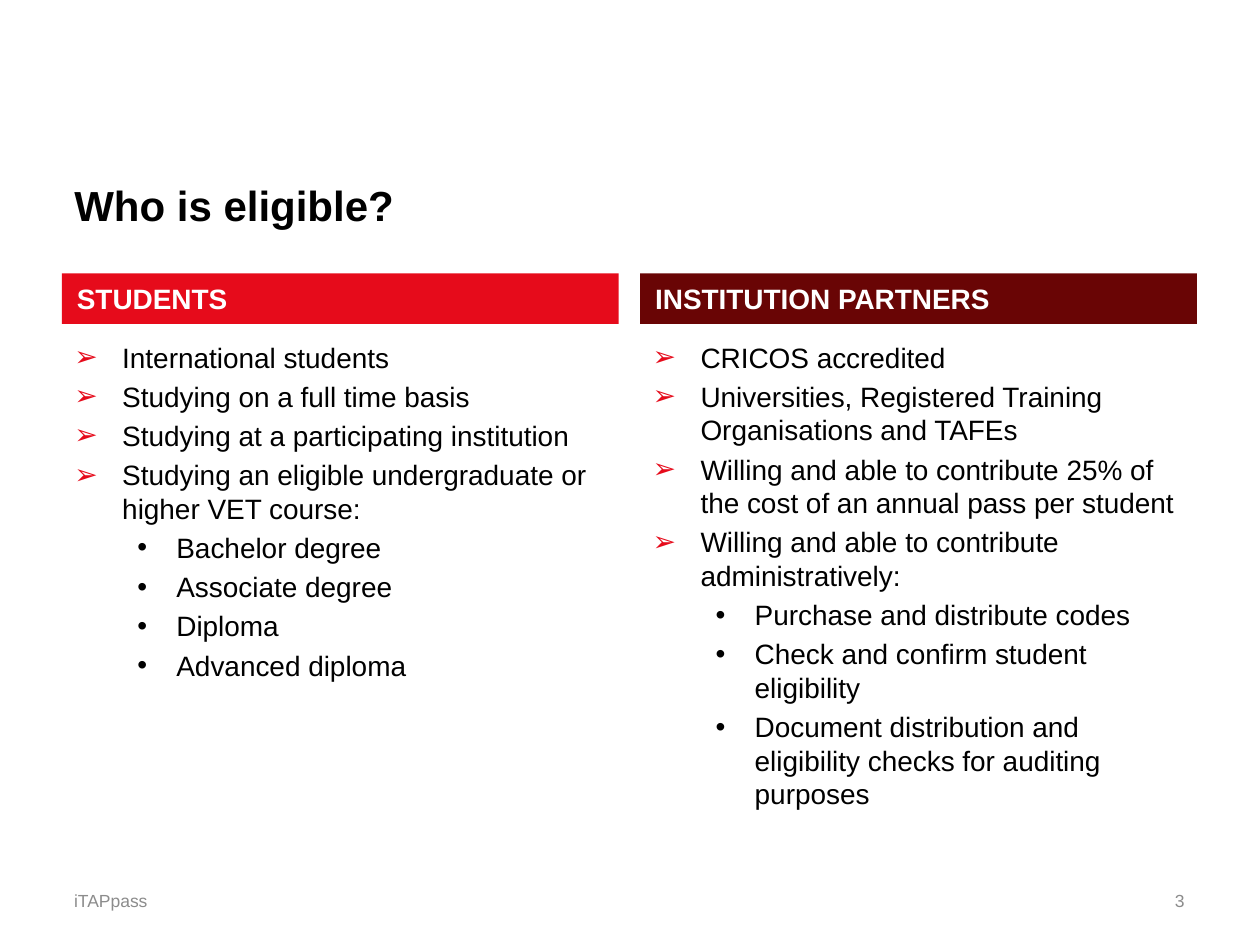
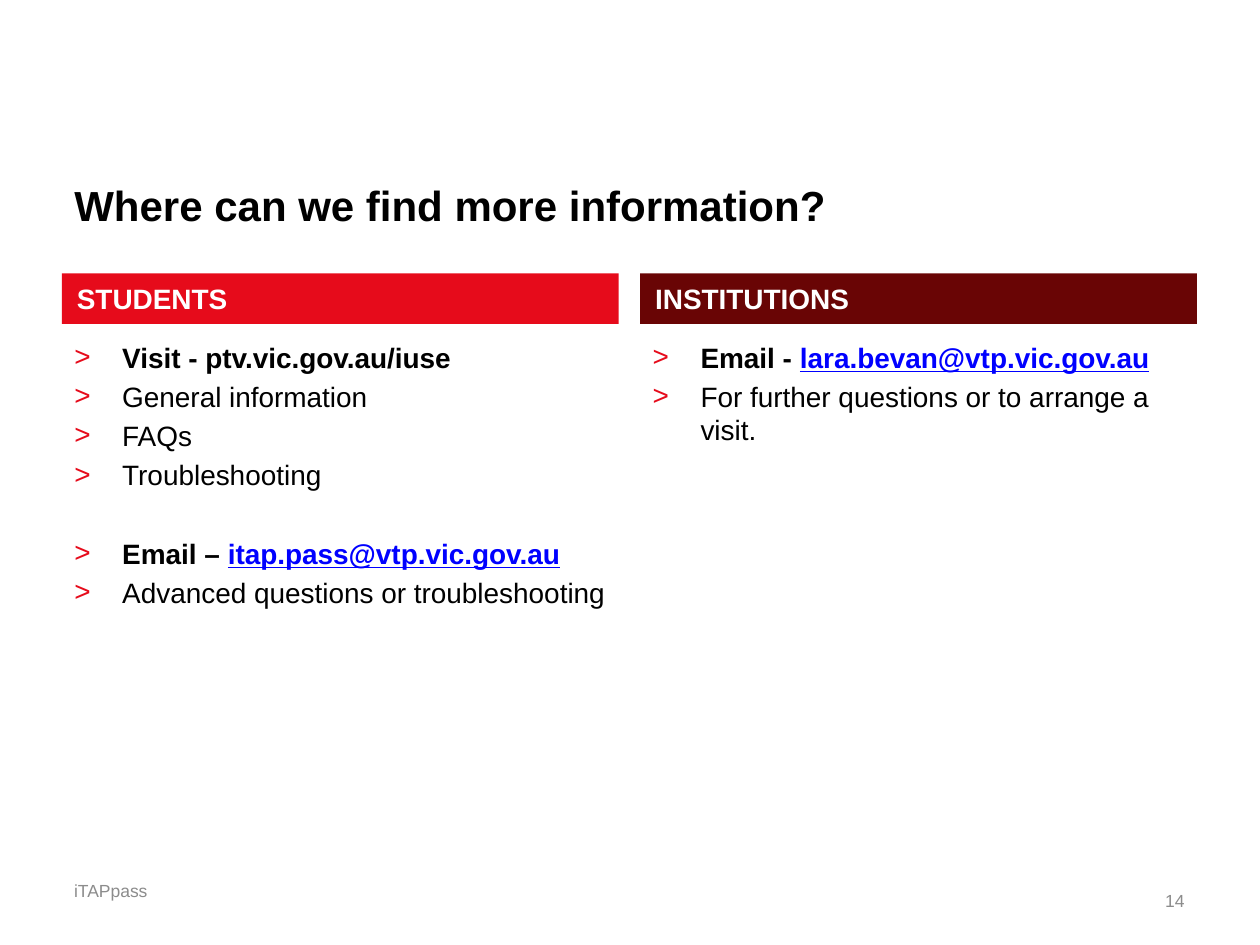
"""Build two comparison slides about a student travel pass."""
from dataclasses import dataclass

from lxml import etree
from pptx import Presentation
from pptx import util as u
from pptx.dml.color import RGBColor
from pptx.enum import text
from pptx.oxml import ns

COLORS = {
    "text": "000000",
    "white": "FFFFFF",
    "students": "E60B1B",
    "institutions": "690505",
    "link": "0000FF",
    "footer": "8C8C8C",
}
FONT = "Arial"
BODY_SIZE = 16
ITEM_SPACE = 3.2
BLANK_LINE_SPACE = 25.6
MARGIN, COLUMN, GUTTER = 0.49, 4.42, 0.17
CONTENT_WIDTH = 2 * COLUMN + GUTTER
FOOTER_WIDTH, NUMBER_WIDTH = 3.17, 2.33
PRODUCT = "iTAPpass"


@dataclass(frozen=True)
class Row:
    """A horizontal row of the slide grid, in inches."""
    top: float
    height: float


TITLE_ROW = Row(1.23, 0.79)
HEADER_ROW = Row(2.17, 0.4)
LIST_TOP = 2.65
FOOTER_ROW = Row(6.95, 0.4)


@dataclass(frozen=True)
class ListLevel:
    """Indents of a list level, in inches."""
    left: float
    hanging: float


LEVELS = (ListLevel(0.38, 0.38), ListLevel(0.81, 0.31))


@dataclass(frozen=True)
class Item:
    """One list entry, optionally ending in an e-mail address."""
    text: str
    level: int = 0
    bold: bool = False
    email: str = ""
    space: float = ITEM_SPACE


@dataclass(frozen=True)
class Column:
    """A headed list."""
    header: str
    color: str
    height: float
    items: tuple[Item, ...]


@dataclass(frozen=True)
class Page:
    """The content of one slide."""
    title: str
    number: int
    bullet: str
    columns: tuple[Column, Column]
    footer_lift: float = 0


PAGES = (
    Page("Who is eligible?", 3, "➢", (
        Column("STUDENTS", "students", 4.06, (
            Item("International students"),
            Item("Studying on a full time basis"),
            Item("Studying at a participating institution"),
            Item("Studying an eligible undergraduate or higher VET course:"),
            Item("Bachelor degree", 1),
            Item("Associate degree", 1),
            Item("Diploma", 1),
            Item("Advanced diploma", 1),
        )),
        Column("INSTITUTION PARTNERS", "institutions", 4.06, (
            Item("CRICOS accredited"),
            Item("Universities, Registered Training Organisations and TAFEs"),
            Item("Willing and able to contribute 25% of the cost of an annual pass per student"),
            Item("Willing and able to contribute administratively:"),
            Item("Purchase and distribute codes", 1),
            Item("Check and confirm student eligibility", 1),
            Item("Document distribution and eligibility checks for auditing purposes", 1),
        )),
    )),
    Page("Where can we find more information?", 14, ">", (
        Column("STUDENTS", "students", 2.47, (
            Item("Visit - ptv.vic.gov.au/iuse", bold=True),
            Item("General information"),
            Item("FAQs"),
            Item("Troubleshooting"),
            Item("Email – ", bold=True, email="itap.pass@vtp.vic.gov.au", space=BLANK_LINE_SPACE),
            Item("Advanced questions or troubleshooting"),
        )),
        Column("INSTITUTIONS", "institutions", 2.17, (
            Item("Email - ", bold=True, email="lara.bevan@vtp.vic.gov.au"),
            Item("For further questions or to arrange a visit."),
        )),
    ), footer_lift=0.16),
)


def rgb(name: str) -> RGBColor:
    """Return a named colour."""
    return RGBColor.from_string(COLORS[name])


def place(shape, left: float, top: float, width: float, height: float) -> None:
    """Move and size a shape in inches."""
    shape.left, shape.top = u.Inches(left), u.Inches(top)
    shape.width, shape.height = u.Inches(width), u.Inches(height)


def style_font(font, size: float, color: str, bold: bool = False) -> None:
    """Apply the shared typeface with a size, colour and weight."""
    font.name, font.size, font.bold = FONT, u.Pt(size), bold
    font.color.rgb = rgb(color)


def write_line(shape, words: str, size: float, color: str, bold: bool = False,
               align=text.PP_ALIGN.LEFT) -> None:
    """Write one vertically centred paragraph."""
    frame = shape.text_frame
    frame.word_wrap = True
    frame.auto_size = text.MSO_AUTO_SIZE.NONE
    frame.vertical_anchor = text.MSO_ANCHOR.MIDDLE
    frame.text = words
    paragraph = frame.paragraphs[0]
    paragraph.alignment = align
    paragraph.space_before = u.Pt(0)
    style_font(paragraph.font, size, color, bold)


def add_bullet(paragraph, level: int, bullet: str, color: str) -> None:
    """Give a paragraph a hanging bullet."""
    properties = paragraph._p.get_or_add_pPr()
    properties.set("marL", str(u.Inches(LEVELS[level].left)))
    properties.set("indent", str(-u.Inches(LEVELS[level].hanging)))
    bullet_color = etree.SubElement(properties, ns.qn("a:buClr"))
    etree.SubElement(bullet_color, ns.qn("a:srgbClr"), val=COLORS[color])
    etree.SubElement(properties, ns.qn("a:buFont"), typeface=FONT)
    etree.SubElement(properties, ns.qn("a:buChar"), char=bullet)


def write_list(shape, items: tuple[Item, ...], bullet: str) -> None:
    """Fill a body placeholder with bulleted items."""
    frame = shape.text_frame
    frame.auto_size = text.MSO_AUTO_SIZE.NONE
    for index, item in enumerate(items):
        paragraph = frame.add_paragraph() if index else frame.paragraphs[0]
        paragraph.level = item.level
        if item.level:
            add_bullet(paragraph, item.level, "•", "text")
        else:
            add_bullet(paragraph, item.level, bullet, "students")
        paragraph.space_before = u.Pt(item.space if index else 0)
        style_font(paragraph.font, BODY_SIZE, "text", item.bold)
        paragraph.add_run().text = item.text
        if item.email:
            address = paragraph.add_run()
            address.text = item.email
            address.font.underline = True
            address.font.color.rgb = rgb("link")


def draw_column(header, body, column: Column, index: int, bullet: str) -> None:
    """Draw a coloured header band and the list below it."""
    left = MARGIN + index * (COLUMN + GUTTER)
    place(header, left, HEADER_ROW.top, COLUMN, HEADER_ROW.height)
    header.fill.solid()
    header.fill.fore_color.rgb = rgb(column.color)
    header.text_frame.margin_left = u.Inches(0.12)
    write_line(header, column.header, BODY_SIZE, "white", True)
    place(body, left, LIST_TOP, COLUMN, column.height)
    write_list(body, column.items, bullet)


def draw_footer(slide, page: Page) -> None:
    """Draw the product name and the slide number."""
    number_left = MARGIN + CONTENT_WIDTH - NUMBER_WIDTH
    for words, left, width, align, lift in (
        (PRODUCT, MARGIN, FOOTER_WIDTH, text.PP_ALIGN.LEFT, page.footer_lift),
        (str(page.number), number_left, NUMBER_WIDTH, text.PP_ALIGN.RIGHT, 0),
    ):
        box = slide.shapes.add_textbox(0, 0, 0, 0)
        place(box, left, FOOTER_ROW.top, width, FOOTER_ROW.height)
        box.text_frame.margin_bottom = u.Inches(0.05 + lift)
        write_line(box, words, 10, "footer", align=align)


def draw_page(presentation, page: Page) -> None:
    """Add one comparison slide."""
    slide = presentation.slides.add_slide(presentation.slide_layouts.get_by_name("Comparison"))
    title, *parts = slide.placeholders
    place(title, MARGIN, TITLE_ROW.top, CONTENT_WIDTH, TITLE_ROW.height)
    write_line(title, page.title, 24, "text", True)
    for index, column in enumerate(page.columns):
        header, body = parts[2 * index:2 * index + 2]
        draw_column(header, body, column, index, page.bullet)
    draw_footer(slide, page)


def main() -> None:
    """Build and save the presentation."""
    presentation = Presentation()
    presentation.slide_width, presentation.slide_height = u.Inches(10), u.Inches(7.5)
    for page in PAGES:
        draw_page(presentation, page)
    presentation.save("out.pptx")


if __name__ == "__main__":
    main()
